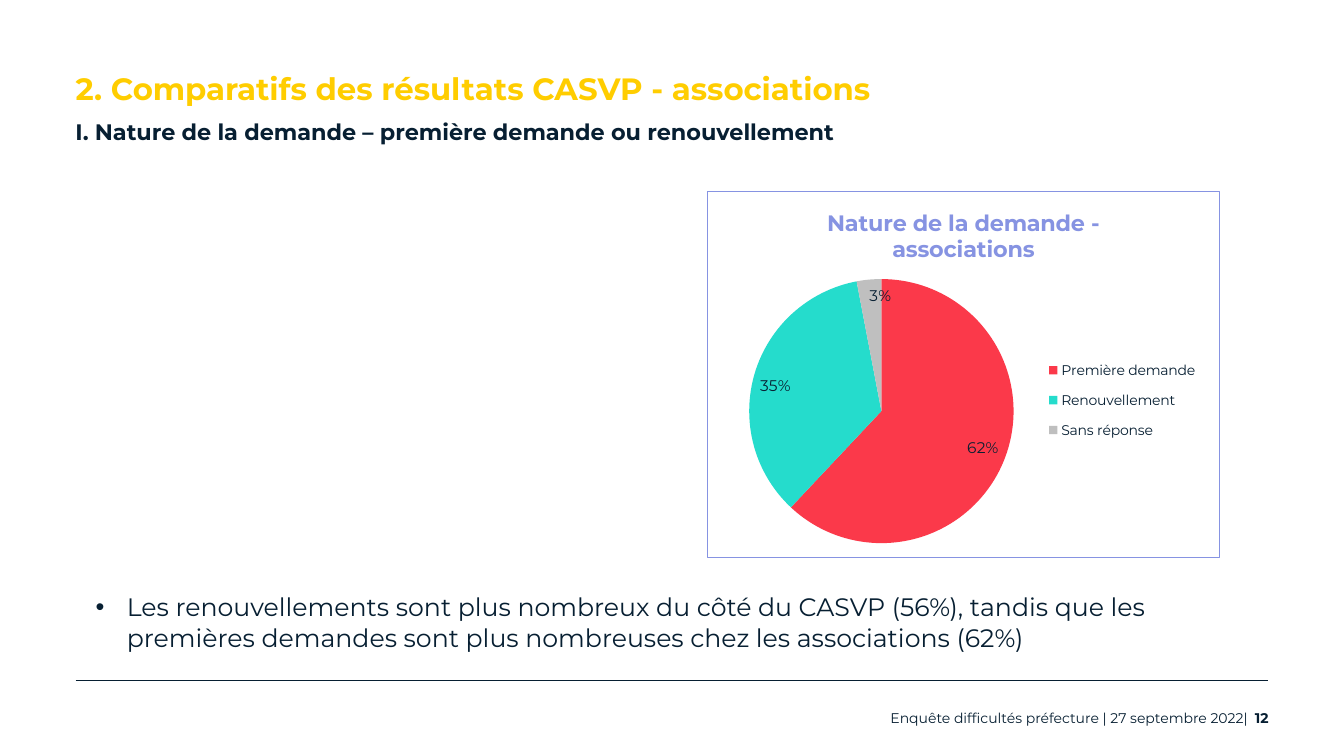
"""Build the slide comparing first requests and renewals at the associations."""
from lxml.etree import SubElement as Sub
from pptx import Presentation
from pptx.chart.data import CategoryChartData as Data
from pptx.dml.color import RGBColor as RGB
from pptx.enum.chart import XL_CHART_TYPE as Kind, XL_LABEL_POSITION as Spot, XL_LEGEND_POSITION as Side
from pptx.enum.text import MSO_ANCHOR as Anchor, PP_ALIGN as Align
from pptx.oxml import parse_xml
from pptx.oxml.ns import nsdecls, qn
from pptx.util import Inches, Pt

FACE = "Montserrat"
NAVY, GOLD, LILAC = "071F32", "FFCD00", "8693E2"


def style(font, size, tint=NAVY, bold=False):
    font.name, font.size, font.bold = FACE, Pt(size), bold
    font.color.rgb = RGB.from_string(tint)


def write(box, text, size, tint=NAVY, bold=False, anchor=Anchor.TOP, align=Align.LEFT, lead=1.15):
    frame = box.text_frame
    frame.word_wrap = True
    frame.vertical_anchor = anchor
    frame.text = text
    para = frame.paragraphs[0]
    para.alignment, para.line_spacing = align, lead
    style(para.font, size, tint, bold)
    return para


deck = Presentation()
deck.slide_width, deck.slide_height = Inches(13.33), Inches(7.5)
slide = deck.slides.add_slide(deck.slide_layouts[5])
shapes = slide.shapes

rule = shapes.add_connector(1, Inches(0.75), Inches(6.75), Inches(12.58), Inches(6.75))
rule.line.color.rgb = RGB.from_string(NAVY)
rule.line.width = Pt(0.65)
Sub(rule.element.spPr, qn("a:effectLst"))

title = shapes.title
title.left, title.top = Inches(0.65), Inches(0.59)
title.width, title.height = Inches(11.81), Inches(0.51)
write(title, "2. Comparatifs des résultats CASVP - associations", 22, GOLD, True)

head = shapes.add_textbox(Inches(0.65), Inches(1.08), Inches(11.81), Inches(0.41))
write(head, "I. Nature de la demande – première demande ou renouvellement", 16,
      bold=True, anchor=Anchor.BOTTOM, lead=1.3)

for left, width, text, bold in [
    (5.78, 6.69, "Enquête difficultés préfecture | 27 septembre 2022|", False),
    (12.09, 0.59, "12", True),
]:
    foot = shapes.add_textbox(Inches(left), Inches(6.97), Inches(width), Inches(0.28))
    write(foot, text, 10, bold=bold, anchor=Anchor.MIDDLE, align=Align.RIGHT)

note = shapes.add_textbox(Inches(0.85), Inches(5.82), Inches(11.72), Inches(0.71))
para = write(note, "Les renouvellements sont plus nombreux du côté du CASVP (56%), tandis que les "
             "premières demandes sont plus nombreuses chez les associations (62%)", 18, lead=1.0)
props = para._p.get_or_add_pPr()
props.set("marL", str(Inches(0.31)))
props.set("indent", str(-Inches(0.31)))
props.insert_element_before(parse_xml(f'<a:buFont {nsdecls("a")} typeface="Arial"/>'), "a:defRPr")
props.insert_element_before(parse_xml(f'<a:buChar {nsdecls("a")} char="•"/>'), "a:defRPr")

data = Data(number_format="0%")
data.categories = ["Première demande", "Renouvellement", "Sans réponse"]
data.add_series("Series 1", [0.62, 0.35, 0.03])
chart = shapes.add_chart(Kind.PIE, Inches(7.01), Inches(1.89), Inches(5.09), Inches(3.65), data).chart
style(chart.font, 10)
chart.has_title = True
chart.chart_title.include_in_layout = False
chart.chart_title.text_frame.text = "Nature de la demande - associations"
style(chart.chart_title.text_frame.paragraphs[0].font, 16, LILAC, True)
chart.has_legend = True
chart.legend.position = Side.RIGHT
chart.legend.include_in_layout = False
style(chart.legend.font, 10)

plot = chart.plots[0]
plot.vary_by_categories = True
for spot, tint in enumerate(["FB394A", "25DCCC", "BFBFBF"]):
    fill = plot.series[0].points[spot].format.fill
    fill.solid()
    fill.fore_color.rgb = RGB.from_string(tint)
labels = plot.series[0].data_labels
labels.show_value = True
labels.number_format, labels.number_format_is_linked = "0%", False
labels.position = Spot.INSIDE_END
style(labels.font, 11)

root = chart.element
root.find(qn("c:chart")).addnext(parse_xml(
    f'<c:spPr {nsdecls("c", "a")}><a:noFill/><a:ln w="{Pt(0.75)}"><a:solidFill>'
    f'<a:srgbClr val="{LILAC}"/></a:solidFill></a:ln></c:spPr>'))
for tag, place, inner, frame in [
    ("c:plotArea", 0, True, (0.08, 0.24, 0.52, 0.72)),
    ("c:legend", 1, False, (0.65, 0.43, 0.32, 0.28)),
]:
    part = root.find(".//" + qn(tag))
    for old in part.findall(qn("c:layout")):
        part.remove(old)
    layout = parse_xml(f'<c:layout {nsdecls("c")}><c:manualLayout/></c:layout>')
    marks = [("layoutTarget", "inner")] if inner else []
    marks += [("xMode", "edge"), ("yMode", "edge"), *zip("xywh", frame)]
    for name, value in marks:
        Sub(layout[0], qn("c:" + name)).set("val", str(value))
    part.insert(place, layout)

deck.save("out.pptx")
